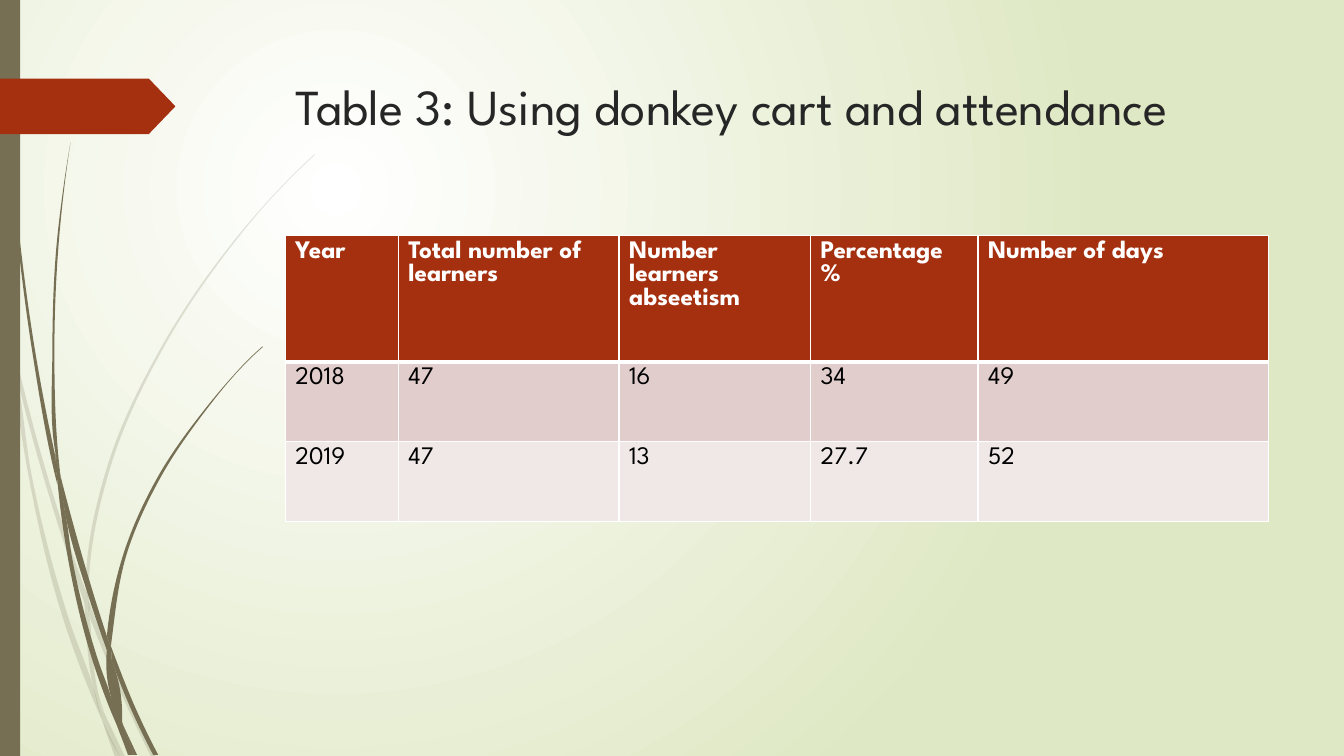
from math import dist

from lxml import etree
from pptx import Presentation
from pptx.dml.color import RGBColor
from pptx.enum.shapes import MSO_SHAPE
from pptx.enum.text import MSO_ANCHOR, MSO_AUTO_SIZE, PP_ALIGN
from pptx.oxml.ns import qn
from pptx.util import Inches, Pt

LEFT = PP_ALIGN.LEFT
TOP = MSO_ANCHOR.TOP
NO_FIT = MSO_AUTO_SIZE.NONE
RECTANGLE, TAG = MSO_SHAPE.RECTANGLE, MSO_SHAPE.PENTAGON

WHITE = RGBColor(0xFF, 0xFF, 0xFF)
BLACK = RGBColor(0, 0, 0)
INK = RGBColor(0x26, 0x26, 0x26)
MEADOW = RGBColor(0xDF, 0xE8, 0xC4)
OLIVE = RGBColor(0x76, 0x6F, 0x54)
RUST = RGBColor(0xA5, 0x30, 0x10)
ROW_FILLS = [RUST, RGBColor(0xE1, 0xCD, 0xCC), RGBColor(0xF0, 0xE8, 0xE7)]

FONT = "League Spartan"
WIDTH, HEIGHT = 13.33, 7.5

TITLE = "Table 3: Using donkey cart and attendance"
ROWS = [
    ["Year", "Total number of\nlearners", "Number learners abseetism", "Percentage %", "Number of days"],
    ["2018", "47", "16", "34", "49"],
    ["2019", "47", "13", "27.7", "52"],
]
COLUMN_WIDTHS = [1.12, 2.19, 1.9, 1.66, 2.88]
ROW_HEIGHTS = [1.25, 0.79, 0.79]
HEADER_BORDERS = {"L": 1, "R": 1, "T": 1, "B": 3}

PALE_BLADES = [
    ([(0, 2.82), (0.09, 3.22), (0.11, 3.5)], [(0.1, 3.44), (0, 2.99)]),
    ([(0.14, 3.45), (0.62, 5.2), (0.85, 5.86)], [(0.84, 5.99), (0.58, 5.22), (0.17, 3.76)]),
    ([(0.88, 5.96), (0.92, 6.07), (1.27, 6.92), (1.55, 7.51)], [(1.5, 7.51), (1.23, 6.94), (0.88, 6.1)]),
    ([(1.05, 7.11), (1.24, 7.51)], [(1.19, 7.51), (1.05, 7.11)]),
    ([(0.11, 3.5), (0.17, 3.76), (0.31, 4.69), (0.7, 6.19), (0.93, 6.83), (1.01, 7.14)],
     [(0.92, 6.93), (0.65, 6.21), (0.28, 4.7), (0.11, 3.5)]),
    ([(0.84, 5.99), (0.88, 6.1), (0.91, 6.46), (1.03, 7.06), (1.05, 7.11)],
     [(0.96, 6.92), (0.93, 6.83), (0.87, 6.46), (0.84, 5.99)]),
    ([(0.88, 5.96), (0.88, 5.84), (1.1, 4.62), (1.6, 3.49), (2.29, 2.45), (2.68, 1.98), (2.9, 1.75), (3.12, 1.54)],
     [(3.12, 1.53), (2.89, 1.75), (2.68, 1.97), (2.28, 2.44), (1.58, 3.48), (1.07, 4.61), (0.85, 5.84), (0.85, 5.86)]),
    ([(1.01, 7.14), (1.14, 7.51)], [(1.19, 7.51), (1.01, 7.14)]),
    ([(0.88, 6.1), (0.88, 5.96), (0.85, 5.86)], [(0.84, 5.99), (0.88, 6.08)]),
    ([(0.93, 6.83), (0.99, 7.07), (1.19, 7.51)], [(1.05, 7.11), (0.96, 6.92), (0.93, 6.83)]),
]
DARK_BLADES = [
    ([(0.03, 0), (0.04, 0.48), (0.07, 1.1), (0.17, 2.33), (0.33, 3.55), (0.56, 4.77), (0.57, 4.81)],
     [(0.55, 4.53), (0.36, 3.55), (0.19, 2.32), (0.08, 1.09), (0.05, 0.48), (0.04, 0)]),
    ([(0.6, 4.72), (0.93, 5.9), (1.06, 6.31)], [(1.06, 6.45), (0.88, 5.92), (0.64, 5.05), (0.6, 4.72)]),
    ([(1.1, 6.41), (1.13, 6.49), (1.36, 7.06), (1.57, 7.49)], [(1.52, 7.49), (1.32, 7.08), (1.11, 6.56)]),
    ([(0.57, 4.77), (0.64, 5.05), (0.72, 5.56), (0.98, 6.57), (1.1, 6.91), (1.17, 7.22)],
     [(1.11, 7.08), (0.93, 6.59), (0.68, 5.57), (0.57, 4.77)]),
    ([(0.6, 4.72), (0.58, 4.53), (0.54, 3.49), (0.58, 2.45), (0.63, 1.93), (0.7, 1.41)],
     [(0.7, 1.41), (0.62, 1.93), (0.56, 2.45), (0.52, 3.49), (0.55, 4.49), (0.6, 4.72)]),
    ([(1.22, 7.19), (1.36, 7.49)], [(1.33, 7.49), (1.22, 7.19)]),
    ([(0.55, 4.49), (0.57, 4.77), (0.64, 5.05)], [(0.6, 4.72), (0.55, 4.49)]),
    ([(1.1, 6.41), (1.11, 6.33), (1.25, 5.52), (1.58, 4.76), (2.05, 4.06), (2.31, 3.74), (2.45, 3.59), (2.61, 3.44)],
     [(2.6, 3.44), (2.45, 3.58), (2.31, 3.73), (2.04, 4.05), (1.56, 4.74), (1.22, 5.51), (1.06, 6.31)]),
    ([(1.17, 7.22), (1.27, 7.49)], [(1.31, 7.49), (1.17, 7.22)]),
    ([(1.06, 6.45), (1.1, 6.91), (1.22, 7.19)], [(1.21, 7.16), (1.11, 6.56), (1.06, 6.45)]),
    ([(1.06, 6.31), (1.06, 6.45), (1.11, 6.56)], [(1.1, 6.41), (1.06, 6.31)]),
    ([(1.1, 6.91), (1.17, 7.22), (1.3, 7.49)], [(1.33, 7.49), (1.22, 7.19), (1.1, 6.91)]),
]


def apply(target, values):
    for name, value in values.items():
        setattr(target, name, value)


def paint(shape, color):
    shape.shadow.inherit = False
    shape.fill.solid()
    shape.fill.fore_color.rgb = color
    shape.line.fill.background()


def write(frame, text, size, color, bold=False):
    frame.text = text
    for para in frame.paragraphs:
        para.alignment = LEFT
        apply(para.runs[0].font, {"name": FONT, "size": Pt(size), "bold": bold})
        para.runs[0].font.color.rgb = color


def mix(first, second, share):
    return tuple(a + (b - a) * share for a, b in zip(first, second))


def edge_slopes(edge):
    lengths = [dist(*ends) for ends in zip(edge, edge[1:])]
    chords = [tuple((b - a) / length for a, b in zip(*ends))
              for ends, length in zip(zip(edge, edge[1:]), lengths)]
    inner = [mix(chords[k], chords[k + 1], lengths[k] / (lengths[k] + lengths[k + 1]))
             for k in range(len(chords) - 1)]
    if not inner:
        return chords * 2
    return [mix(inner[0], chords[0], 2), *inner, mix(inner[-1], chords[-1], 2)]


def curve_points(edge):
    slopes = edge_slopes(edge)
    points = []
    for index, (start, end) in enumerate(zip(edge, edge[1:])):
        third = dist(start, end) / 3
        points += [
            tuple(a + m * third for a, m in zip(start, slopes[index])),
            tuple(b - m * third for b, m in zip(end, slopes[index + 1])),
            end,
        ]
    return points


def blade_outline(forward, back):
    joint = [mix(forward[-1], back[0], share) for share in (1 / 3, 2 / 3, 1)]
    return [forward[0], *curve_points(forward), *joint, *curve_points(back)]


def bend_segments(shape):
    segments = list(shape.element.iter(qn("a:lnTo")))
    for index in range(0, len(segments), 3):
        curve = etree.Element(qn("a:cubicBezTo"))
        segments[index].addprevious(curve)
        for segment in segments[index:index + 3]:
            curve.append(segment[0])
            segment.getparent().remove(segment)


def draw_backdrop(page):
    fill = page.background.fill
    fill.gradient()
    for stop, color, position in zip(fill.gradient_stops, (WHITE, MEADOW), (0, 1)):
        stop.color.rgb = color
        stop.position = position
    gradient = page.element.find(".//" + qn("a:gradFill"))
    gradient.remove(gradient.find(qn("a:lin")))
    circle = etree.SubElement(gradient, qn("a:path"))
    circle.set("path", "circle")
    center = etree.SubElement(circle, qn("a:fillToRect"))
    for side, share in zip("ltrb", (50, 50, 100, 100)):
        center.set(side, str(share * 1000))


def draw_blades(page, box, blades, opacity=100):
    group = page.shapes.add_group_shape()
    for edges in blades:
        outline = [(Inches(box[0] + x), Inches(box[1] + y)) for x, y in blade_outline(*edges)]
        builder = group.shapes.build_freeform(*outline[0])
        builder.add_line_segments(outline[1:], close=True)
        blade = builder.convert_to_shape()
        bend_segments(blade)
        paint(blade, OLIVE)
        if opacity < 100:
            color = blade.element.spPr.find(qn("a:solidFill"))[0]
            etree.SubElement(color, qn("a:alpha")).set("val", str(opacity * 1000))


def draw_margin(page, box):
    left, top, _, height = box
    draw_blades(page, box, PALE_BLADES, 20)
    draw_blades(page, box, DARK_BLADES)
    bar = page.shapes.add_shape(RECTANGLE, *map(Inches, (left, top, 0.2, height)))
    tag = page.shapes.add_shape(TAG, *map(Inches, (left, top + 0.78, 1.74, 0.55)))
    tag.adjustments[0] = 0.48
    paint(bar, OLIVE)
    paint(tag, RUST)


def draw_title(page, box):
    title = page.shapes.title
    apply(title, dict(zip(("left", "top", "width", "height"), map(Inches, box))))
    write(title.text_frame, TITLE, 36, INK)
    apply(title.text_frame, {"vertical_anchor": TOP, "word_wrap": True, "auto_size": NO_FIT})


def add_border(cell, side, points):
    line = etree.SubElement(cell._tc.get_or_add_tcPr(), qn("a:ln" + side))
    line.set("w", str(Pt(points)))
    fill = etree.SubElement(line, qn("a:solidFill"))
    etree.SubElement(fill, qn("a:srgbClr")).set("val", str(WHITE))


def draw_table(page, box):
    table = page.shapes.add_table(len(ROWS), len(COLUMN_WIDTHS), *map(Inches, box)).table
    for column, width in zip(table.columns, COLUMN_WIDTHS):
        column.width = Inches(width)
    for index, (row, height, texts) in enumerate(zip(table.rows, ROW_HEIGHTS, ROWS)):
        row.height = Inches(height)
        header = index == 0
        for cell, text in zip(row.cells, texts):
            write(cell.text_frame, text, 18, WHITE if header else BLACK, header)
            for side, points in HEADER_BORDERS.items() if header else ():
                add_border(cell, side, points)
            cell.fill.solid()
            cell.fill.fore_color.rgb = ROW_FILLS[index]


def main():
    deck = Presentation()
    apply(deck, {"slide_width": Inches(WIDTH), "slide_height": Inches(HEIGHT)})
    page = deck.slides.add_slide(deck.slide_layouts[5])
    draw_backdrop(page)
    draw_margin(page, (0, 0, 3.12, HEIGHT))
    draw_title(page, (2.83, 0.69, 9.75, 1.4))
    draw_table(page, (2.83, 2.34, sum(COLUMN_WIDTHS), sum(ROW_HEIGHTS)))
    deck.save("out.pptx")


if __name__ == "__main__":
    main()
